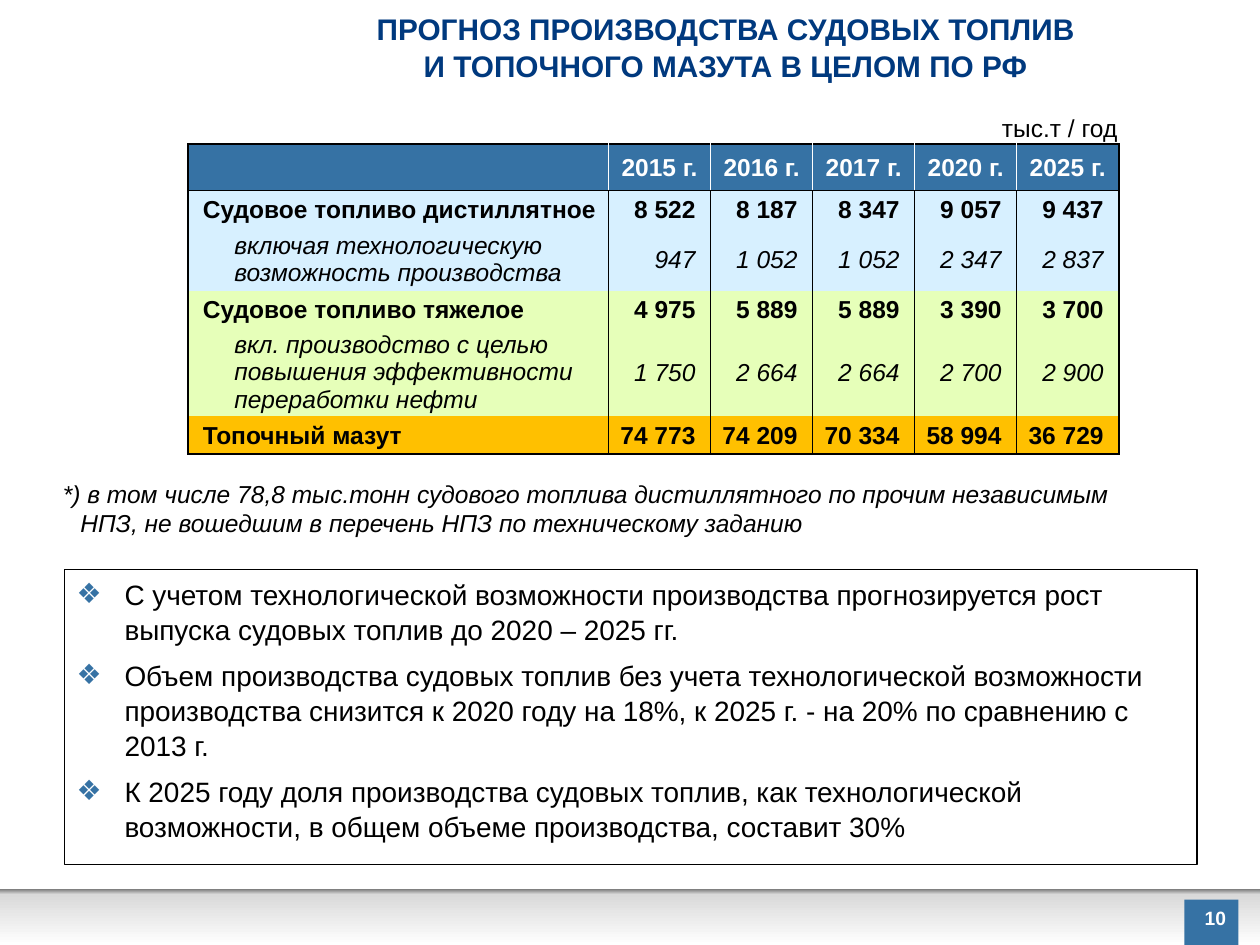
from copy import deepcopy
from dataclasses import dataclass
from typing import Optional

from lxml import etree
from pptx import Presentation
from pptx import util as u
from pptx.dml import color as dml
from pptx.enum import shapes, text
from pptx.oxml import ns

PX = 9144
HUES = {
    "black": "000000", "white": "FFFFFF", "navy": "00397E", "blue": "3672A4",
    "sky": "D7F0FF", "lime": "E6FFB9", "gold": "FFC000",
    "dark": "808080", "pale": "D9D9D9",
}
LEFT, MID, RIGHT = text.PP_ALIGN.LEFT, text.PP_ALIGN.CENTER, text.PP_ALIGN.RIGHT
PLAIN = "{2D5ABB26-0587-4C30-8999-92F81FD0307C}"
COLS = [334] + [81] * 5
TALL = [23, 37, 29, 51, 29, 51, 30]
YEARS = ["2015 г.", "2016 г.", "2017 г.", "2020 г.", "2025 г."]


@dataclass
class Box:
    x: int
    y: int
    w: int
    h: int
    fill: Optional[str] = None
    line: Optional[str] = None


@dataclass
class Style:
    size: int = 14
    hue: str = "black"
    bold: bool = False
    ital: bool = False
    align: int = LEFT
    pad: int = 0
    hang: int = 0
    gap: int = 0
    space: float = 1.0
    mark: str = ""


@dataclass
class Row:
    label: str
    nums: list
    fill: str
    sub: bool = False


ROWS = [
    Row("Судовое топливо дистиллятное",
        ["8 522", "8 187", "8 347", "9 057", "9 437"], "sky"),
    Row("включая технологическую возможность производства",
        ["947", "1 052", "1 052", "2 347", "2 837"], "sky", True),
    Row("Судовое топливо тяжелое",
        ["4 975", "5 889", "5 889", "3 390", "3 700"], "lime"),
    Row("вкл. производство с целью повышения эффективности переработки нефти",
        ["1 750", "2 664", "2 664", "2 700", "2 900"], "lime", True),
    Row("Топочный мазут",
        ["74 773", "74 209", "70 334", "58 994", "36 729"], "gold"),
]
POINTS = [
    "С учетом технологической возможности производства прогнозируется рост "
    "выпуска судовых топлив до 2020 – 2025 гг.",
    "Объем производства судовых топлив без учета технологической возможности "
    "производства снизится к 2020 году на 18%, к 2025 г. - на 20% по сравнению с 2013 г.",
    "К 2025 году доля производства судовых топлив, как технологической "
    "возможности, в общем объеме производства, составит 30%",
]


def rgb(hue: str) -> dml.RGBColor:
    return dml.RGBColor.from_string(HUES[hue])


def put(obj, vals: dict) -> None:
    for key, val in vals.items():
        setattr(obj, key, val)


def node(up, tag: str, **vals):
    return etree.SubElement(up, ns.qn("a:" + tag), **vals)


def write(frame, lines: list, st: Style) -> None:
    frame.word_wrap = True
    for i, line in enumerate(lines):
        para = frame.paragraphs[0] if i == 0 else frame.add_paragraph()
        para.text = line
        put(para, {"alignment": st.align, "line_spacing": st.space,
                   "space_before": u.Pt(st.gap if i else 0)})
        prop = para._p.get_or_add_pPr()
        put_in = {"marL": st.pad, "indent": st.hang}
        for key, val in put_in.items():
            prop.set(key, str(val * PX))
        if st.mark:
            node(node(prop, "buClr"), "srgbClr", val=HUES["blue"])
            node(prop, "buFont", typeface="Arial")
            node(prop, "buChar", char=st.mark)
        for run in para.runs:
            put(run.font, {"name": "Arial", "size": u.Pt(st.size),
                           "bold": st.bold, "italic": st.ital})
            run.font.color.rgb = rgb(st.hue)


def label(slide, box: Box, line: str, st: Style, anchor) -> None:
    item = slide.shapes.add_textbox(*(v * PX for v in (box.x, box.y, box.w, box.h)))
    item.text_frame.vertical_anchor = anchor
    write(item.text_frame, [line], st)


def rect(slide, box: Box):
    item = slide.shapes.add_shape(
        shapes.MSO_SHAPE.RECTANGLE, *(v * PX for v in (box.x, box.y, box.w, box.h)))
    item.shadow.inherit = False
    item.text_frame.vertical_anchor = text.MSO_ANCHOR.TOP
    if box.fill:
        item.fill.solid()
        item.fill.fore_color.rgb = rgb(box.fill)
    if box.line:
        item.line.color.rgb = rgb(box.line)
        item.line.width = u.Pt(0)
    else:
        item.line.fill.background()
    return item


def shade(item, stops: list) -> None:
    item.fill.gradient()
    item.fill.gradient_angle = 270
    first = item._element.spPr.find(".//" + ns.qn("a:gs"))
    first.addnext(deepcopy(first))
    for stop, (pos, hue) in zip(item.fill.gradient_stops, stops):
        stop.position = pos
        stop.color.rgb = rgb(hue)


def cell(spot, line: str, st: Style, pads: tuple, fill: Optional[str], edges: dict) -> None:
    sides = ("margin_left", "margin_top", "margin_right", "margin_bottom")
    put(spot, {k: v * PX for k, v in zip(sides, pads)})
    spot.vertical_anchor = text.MSO_ANCHOR.MIDDLE
    prop = spot._tc.get_or_add_tcPr()
    for side in "LRTB":
        edge = node(prop, "ln" + side, w=str(u.Pt(1)))
        if side in edges:
            node(node(edge, "solidFill"), "srgbClr", val=HUES[edges[side]])
        else:
            node(edge, "noFill")
    if fill:
        spot.fill.solid()
        spot.fill.fore_color.rgb = rgb(fill)
    else:
        spot.fill.background()
    if line:
        write(spot.text_frame, [line], st)
    else:
        node(spot.text_frame.paragraphs[0]._p, "endParaRPr", sz="1400")


def grid(slide) -> None:
    item = slide.shapes.add_table(
        len(TALL), len(COLS), 149 * PX, 90 * PX, sum(COLS) * PX, sum(TALL) * PX)
    tab = item.table
    put(tab, {"first_row": False, "horz_banding": False})
    tab._tbl.tblPr.find(ns.qn("a:tableStyleId")).text = PLAIN
    for part, size in zip(tab.columns, COLS):
        part.width = size * PX
    for part, size in zip(tab.rows, TALL):
        part.height = size * PX
    tab.cell(0, 4).merge(tab.cell(0, 5))
    last = len(COLS) - 1
    thin = (1, 1, 1, 0)
    for c in range(len(COLS)):
        unit = "тыс.т / год" if c == 4 else ""
        cell(tab.cell(0, c), unit, Style(align=RIGHT), thin, None, {"B": "black"})
        cell(tab.cell(1, c), ([""] + YEARS)[c],
             Style(hue="white", bold=True, align=MID), thin, "blue",
             {"L": "white" if c else "black", "T": "black",
              "R": "white" if c < last else "black", "B": "black"})
    for r, row in enumerate(ROWS, 2):
        edges = {"L": "black", "R": "black"}
        if r == 2:
            edges["T"] = "black"
        if r == len(TALL) - 1:
            edges["B"] = "black"
        for c, line in enumerate([row.label] + row.nums):
            st = Style(bold=not row.sub, ital=row.sub, align=RIGHT if c else LEFT)
            pads = (1, 1, 12, 0) if c else (37, 0, 0, 0) if row.sub else (12, 1, 1, 0)
            cell(tab.cell(r, c), line, st, pads, row.fill, edges)


def main() -> None:
    deck = Presentation()
    put(deck, {"slide_width": 1000 * PX, "slide_height": 750 * PX})
    slide = deck.slides.add_slide(deck.slide_layouts[6])
    label(slide, Box(76, 9, 1000, 55),
          "ПРОГНОЗ ПРОИЗВОДСТВА СУДОВЫХ ТОПЛИВ\nИ ТОПОЧНОГО МАЗУТА В ЦЕЛОМ ПО РФ",
          Style(17, "navy", True, align=MID, space=1.05), text.MSO_ANCHOR.MIDDLE)
    shade(rect(slide, Box(0, 706, 1000, 44)),
          [(0, "dark"), (0.09, "pale"), (1, "white")])
    grid(slide)
    label(slide, Box(40, 375, 899, 57),
          "*) в том числе 78,8 тыс.тонн судового топлива дистиллятного по прочим "
          "независимым НПЗ, не вошедшим в перечень НПЗ по техническому заданию",
          Style(ital=True, pad=14, hang=-16), text.MSO_ANCHOR.TOP)
    page = rect(slide, Box(940, 714, 43, 36, "blue"))
    write(page.text_frame, ["10"], Style(11, "white", True, align=RIGHT))
    notes = rect(slide, Box(51, 452, 899, 234, "white", "black"))
    write(notes.text_frame, POINTS,
          Style(16, pad=38, hang=-38, gap=6, space=1.05, mark="❖"))
    deck.save("out.pptx")


if __name__ == "__main__":
    main()
